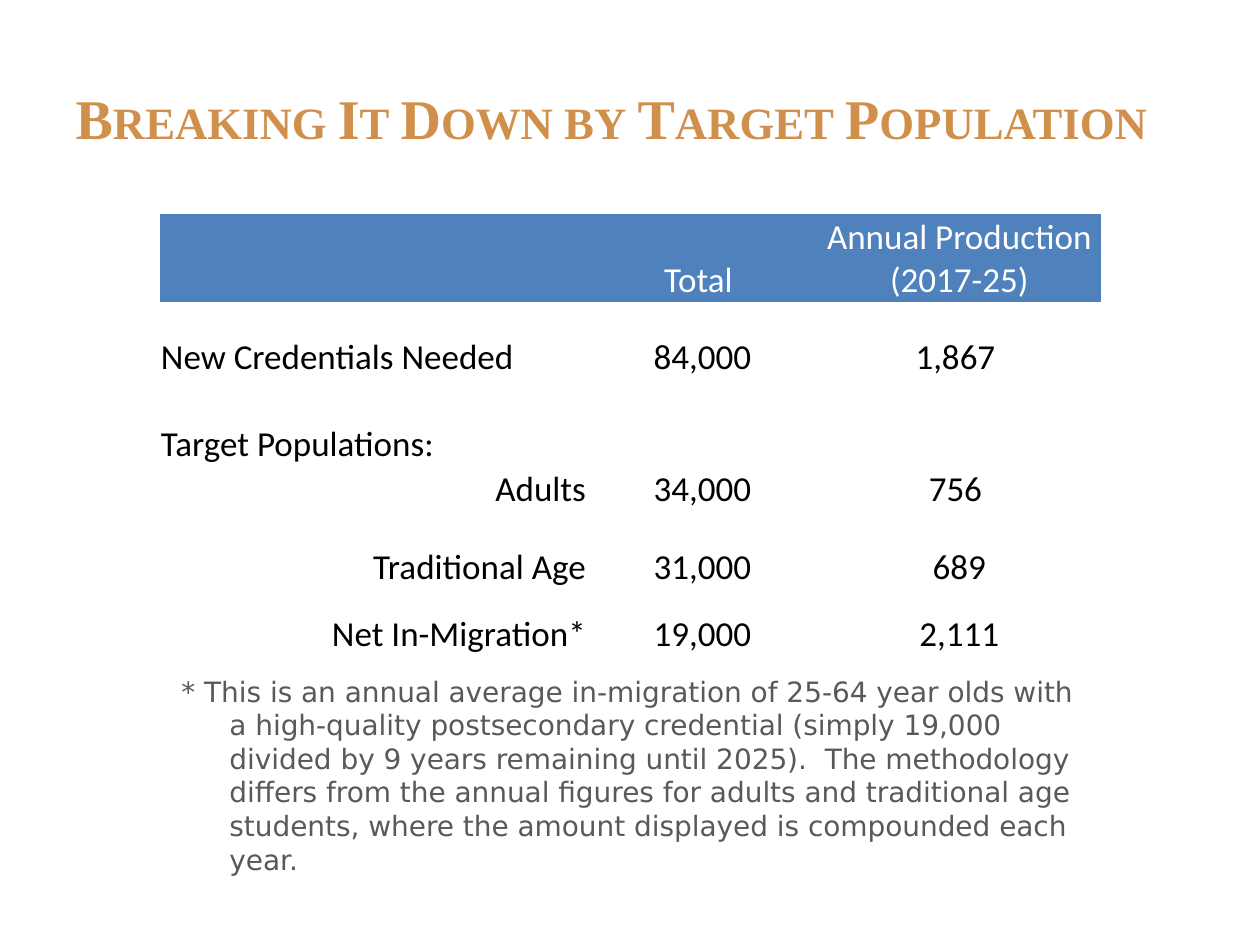
from pptx import Presentation
from pptx.dml.color import RGBColor
from pptx.enum.text import MSO_ANCHOR, MSO_AUTO_SIZE, PP_ALIGN
from pptx.util import Emu, Pt

PX = 914400 // 126
COLORS = {"title": "D0904C", "header": "4F81BD", "header_text": "FFFFFF",
          "body": "000000", "footnote": "595959"}
NO_STYLE_NO_GRID = "{2D5ABB26-0587-4C30-8999-92F81FD0307C}"
LEFT, CENTER, RIGHT = PP_ALIGN.LEFT, PP_ALIGN.CENTER, PP_ALIGN.RIGHT

# Content
TITLE = "Breaking It Down by Target Population"
# Row height, alignment of the first column, cell texts
ROWS = [
    (88, LEFT, ("", "Total ", "Annual Production\n(2017-25)")),
    (77, LEFT, ("New Credentials Needed", "84,000", "1,867 ")),
    (87, LEFT, ("Target Populations:",)),
    (45, RIGHT, ("Adults", "34,000", "756 ")),
    (78, RIGHT, ("Traditional Age", "31,000", "689")),
    (67, RIGHT, ("Net In-Migration*", "19,000", "2,111")),
]
COLUMN_WIDTHS = (427, 231, 283)
FOOTNOTE = (
    "* This is an annual average in-migration of 25-64 year olds with a "
    "high-quality postsecondary credential (simply 19,000 divided by 9 years "
    "remaining until 2025).  The methodology differs from the annual figures "
    "for adults and traditional age students, where the amount displayed is "
    "compounded each year."
)


def px(*lengths):
    return [Emu(length * PX) for length in lengths]


def set_font(paragraph, name, size, color):
    paragraph.font.name = name
    paragraph.font.size = Pt(size)
    paragraph.font.color.rgb = RGBColor.from_string(COLORS[color])


presentation = Presentation()
presentation.slide_width, presentation.slide_height = px(1260, 945)
slide = presentation.slides.add_slide(presentation.slide_layouts[5])

# Title
title = slide.shapes.title
title.left, title.top, title.width, title.height = px(63, 38, 1134, 158)
title.text_frame.text = TITLE
title.text_frame.auto_size = MSO_AUTO_SIZE.NONE
title.text_frame.vertical_anchor = MSO_ANCHOR.MIDDLE
heading = title.text_frame.paragraphs[0]
heading.alignment = LEFT
set_font(heading, "Times New Roman", 32, "title")
heading.font.bold = True
heading.runs[0]._r.get_or_add_rPr().set("cap", "small")

# Table of credentials
table_size = (sum(COLUMN_WIDTHS), sum(height for height, _, _ in ROWS))
frame = slide.shapes.add_table(len(ROWS), len(COLUMN_WIDTHS),
                               *px(160, 214, *table_size))
credentials = frame.table
credentials._tbl.tblPr.find("{*}tableStyleId").text = NO_STYLE_NO_GRID
credentials.first_row = credentials.horz_banding = False
for column, width in zip(credentials.columns, COLUMN_WIDTHS):
    column.width = Emu(width * PX)

for row_index, (height, label_alignment, texts) in enumerate(ROWS):
    row = credentials.rows[row_index]
    row.height = Emu(height * PX)
    is_header = row_index == 0
    for column_index, cell in enumerate(row.cells):
        if is_header:
            cell.fill.solid()
            cell.fill.fore_color.rgb = RGBColor.from_string(COLORS["header"])
        else:
            cell.fill.background()
        cell.margin_left, cell.margin_right, cell.margin_top, cell.margin_bottom = px(1, 1, 1, 0)
        cell.vertical_anchor = MSO_ANCHOR.BOTTOM
        if column_index >= len(texts):
            continue
        cell.text = texts[column_index]
        for paragraph in cell.text_frame.paragraphs:
            paragraph.alignment = CENTER if column_index else label_alignment
            set_font(paragraph, "Calibri", 20, "header_text" if is_header else "body")
    if len(texts) == 1:
        row.cells[0].merge(row.cells[len(COLUMN_WIDTHS) - 1])

# Footnote with hanging indent
footnote = slide.shapes.add_textbox(*px(169, 668, 940, 251)).text_frame
footnote.word_wrap = True
footnote.text = FOOTNOTE
note = footnote.paragraphs[0]
properties = note._p.get_or_add_pPr()
properties.set("marL", str(48 * PX))
properties.set("indent", str(-48 * PX))
set_font(note, "DejaVu Sans", 16, "footnote")

presentation.save("out.pptx")
